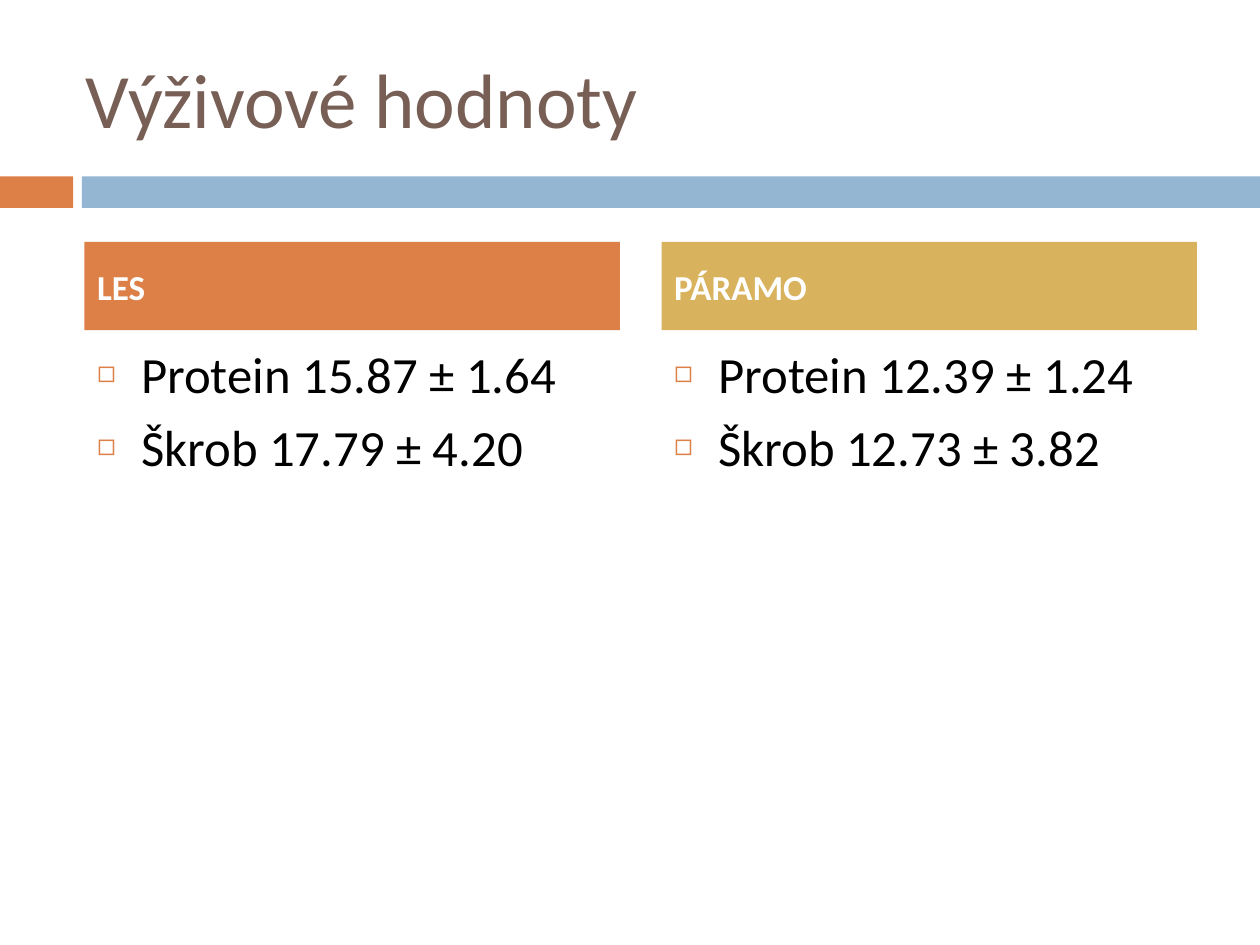
from dataclasses import dataclass

from lxml import etree
from pptx import Presentation
from pptx import util as u
from pptx.dml.color import RGBColor
from pptx.enum import shapes, text
from pptx.oxml.ns import qn


@dataclass(frozen=True)
class Theme:
    font: str = "Calibri"
    brown: str = "775F55"
    orange: str = "DD8047"
    blue: str = "94B6D2"
    gold: str = "D8B25C"
    black: str = "000000"
    white: str = "FFFFFF"
    title_size: int = 44
    body_size: int = 29
    heading_size: int = 20
    paragraph_gap: int = 7


THEME = Theme()
COLUMN_LEFT = 0.67
COLUMN_STEP = 4.58
COLUMN_WIDTH = 4.25
COLUMNS = (
    ("LES", THEME.orange, ("Protein 15.87 ± 1.64", "Škrob 17.79 ± 4.20")),
    ("PÁRAMO", THEME.gold, ("Protein 12.39 ± 1.24", "Škrob 12.73 ± 3.82")),
)


def place(shape, left, top, width, height):
    shape.left, shape.top = u.Inches(left), u.Inches(top)
    shape.width, shape.height = u.Inches(width), u.Inches(height)


def fill_solid(shape, color):
    shape.fill.solid()
    shape.fill.fore_color.rgb = RGBColor.from_string(color)


def add_bullet(paragraph, indent=0.35):
    properties = paragraph._p.get_or_add_pPr()
    properties.set("marL", str(u.Inches(indent)))
    properties.set("indent", str(-u.Inches(indent)))
    color = etree.SubElement(properties, qn("a:buClr"))
    etree.SubElement(color, qn("a:srgbClr"), val=THEME.orange)
    etree.SubElement(properties, qn("a:buSzPct"), val="60000")
    etree.SubElement(properties, qn("a:buChar"), char="◻")


def write_text(shape, lines, *, size, color, bold=False, bullet=False,
               anchor=text.MSO_ANCHOR.MIDDLE):
    frame = shape.text_frame
    frame.text = "\n".join(lines)
    frame.word_wrap = True
    frame.auto_size = text.MSO_AUTO_SIZE.NONE
    frame.vertical_anchor = anchor
    for index, paragraph in enumerate(frame.paragraphs):
        if bullet:
            add_bullet(paragraph)
        paragraph.alignment = text.PP_ALIGN.LEFT
        paragraph.space_before = u.Pt(THEME.paragraph_gap if index else 0)
        font = paragraph.font
        font.name, font.size, font.bold = THEME.font, u.Pt(size), bold
        font.color.rgb = RGBColor.from_string(color)


def add_band(slide, left, width, color):
    band = slide.shapes.add_shape(
        shapes.MSO_SHAPE.RECTANGLE,
        u.Inches(left), u.Inches(1.4), u.Inches(width), u.Inches(0.25))
    band.shadow.inherit = False
    fill_solid(band, color)
    band.line.fill.background()


def fill_column(heading, body, left, name, color, values):
    place(heading, left, 1.92, COLUMN_WIDTH, 0.7)
    fill_solid(heading, color)
    write_text(heading, [name], size=THEME.heading_size,
               color=THEME.white, bold=True)
    place(body, left, 2.67, COLUMN_WIDTH, 3.92)
    write_text(body, values, size=THEME.body_size, color=THEME.black,
               bullet=True, anchor=text.MSO_ANCHOR.TOP)


def main():
    presentation = Presentation()
    presentation.slide_width = u.Inches(10)
    presentation.slide_height = u.Inches(7.5)
    comparison_layout = presentation.slide_layouts[4]
    slide = presentation.slides.add_slide(comparison_layout)

    add_band(slide, 0, 0.58, THEME.orange)
    add_band(slide, 0.65, 9.35, THEME.blue)

    title, *bodies = slide.placeholders
    place(title, 0.58, 0.3, 8.92, 0.95)
    write_text(title, ["Výživové hodnoty"], size=THEME.title_size,
               color=THEME.brown)

    for index, column in enumerate(COLUMNS):
        heading, body = bodies[2 * index:2 * index + 2]
        fill_column(heading, body, COLUMN_LEFT + index * COLUMN_STEP, *column)

    presentation.save("out.pptx")


if __name__ == "__main__":
    main()
